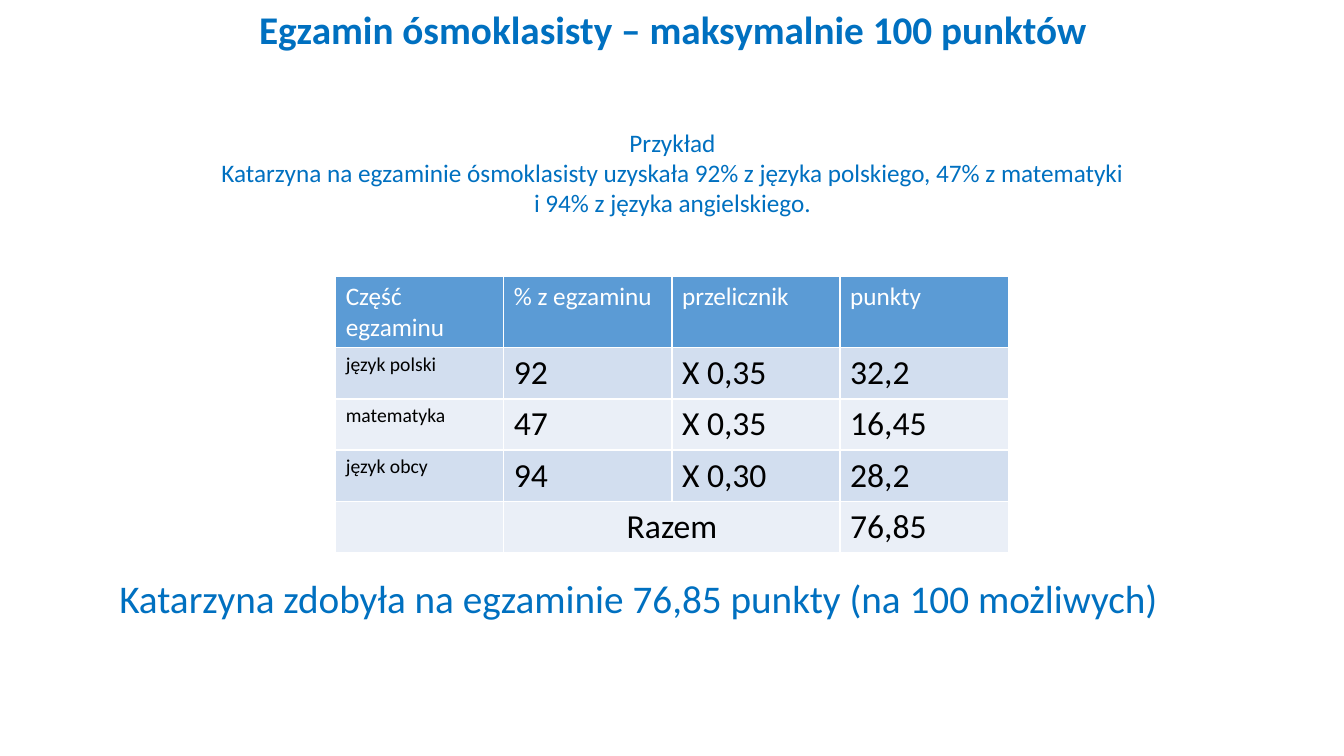
from pptx import Presentation
from pptx.dml.color import RGBColor
from pptx.enum.text import MSO_ANCHOR, MSO_AUTO_SIZE, PP_ALIGN
from pptx.util import Inches, Pt

BLUE = RGBColor(0x00, 0x70, 0xC0)
HEADER = RGBColor(0x5B, 0x9B, 0xD5)
BANDS = [RGBColor(0xEA, 0xEF, 0xF7), RGBColor(0xD2, 0xDE, 0xEF)]
WHITE = RGBColor(0xFF, 0xFF, 0xFF)
BLACK = RGBColor(0x00, 0x00, 0x00)
FONT = "Calibri"

TITLE = "Egzamin ósmoklasisty – maksymalnie 100 punktów"
EXAMPLE = [
    "Przykład",
    "Katarzyna na egzaminie ósmoklasisty uzyskała 92% z języka polskiego, 47% z matematyki",
    "i 94% z języka angielskiego.",
]
RESULT = "Katarzyna zdobyła na egzaminie 76,85 punkty (na 100 możliwych)"
SCORES = [
    ["Część egzaminu", "% z egzaminu", "przelicznik", "punkty"],
    ["język polski", "92", "X 0,35", "32,2"],
    ["matematyka", "47", "X 0,35", "16,45"],
    ["język obcy", "94", "X 0,30", "28,2"],
    ["", "Razem", "", "76,85"],
]
HEADER_H, ROW_H = 0.7, 0.5


def add_text(p, text, size, color, bold=False):
    r = p.add_run()
    r.text = text
    r.font.name = FONT
    r.font.size = Pt(size)
    r.font.bold = bold
    r.font.color.rgb = color


def fill_frame(sp, lines, size, bold=False):
    tf = sp.text_frame
    tf.word_wrap = True
    tf.auto_size = MSO_AUTO_SIZE.NONE
    tf.vertical_anchor = MSO_ANCHOR.TOP
    for i, line in enumerate(lines):
        p = tf.add_paragraph() if i else tf.paragraphs[0]
        p.alignment = PP_ALIGN.CENTER
        add_text(p, line, size, BLUE, bold)


def add_box(s, lines, size, left, top, width, height):
    sp = s.shapes.add_textbox(Inches(left), Inches(top), Inches(width), Inches(height))
    fill_frame(sp, lines, size)


def add_scores(s):
    rows, cols = len(SCORES), len(SCORES[0])
    height = HEADER_H + ROW_H * (rows - 1)
    frame = s.shapes.add_table(rows, cols, Inches(3.33), Inches(2.74),
                               Inches(6.67), Inches(height))
    table = frame.table
    for i, row in enumerate(SCORES):
        table.rows[i].height = Inches(ROW_H if i else HEADER_H)
        for j, text in enumerate(row):
            cell = table.cell(i, j)
            cell.fill.solid()
            cell.fill.fore_color.rgb = BANDS[i % 2] if i else HEADER
            if text:
                size = 18 if i == 0 else 14 if j == 0 else 24
                add_text(cell.text_frame.paragraphs[0], text, size, BLACK if i else WHITE)
    total = table.cell(rows - 1, 1)
    total.merge(table.cell(rows - 1, 2))
    total.text_frame.paragraphs[0].alignment = PP_ALIGN.CENTER


def main():
    prs = Presentation()
    prs.slide_width, prs.slide_height = Inches(13.33), Inches(7.5)
    s = prs.slides.add_slide(prs.slide_layouts[5])
    title = s.shapes.title
    title.left, title.top = Inches(1.67), Inches(0)
    title.width, title.height = Inches(10), Inches(1.25)
    fill_frame(title, [TITLE], 28, bold=True)
    add_box(s, EXAMPLE, 18, 1.67, 1.21, 10, 1.31)
    add_scores(s)
    add_box(s, [RESULT], 28, 0.89, 5.65, 10.88, 0.57)
    prs.save("out.pptx")


if __name__ == "__main__":
    main()
